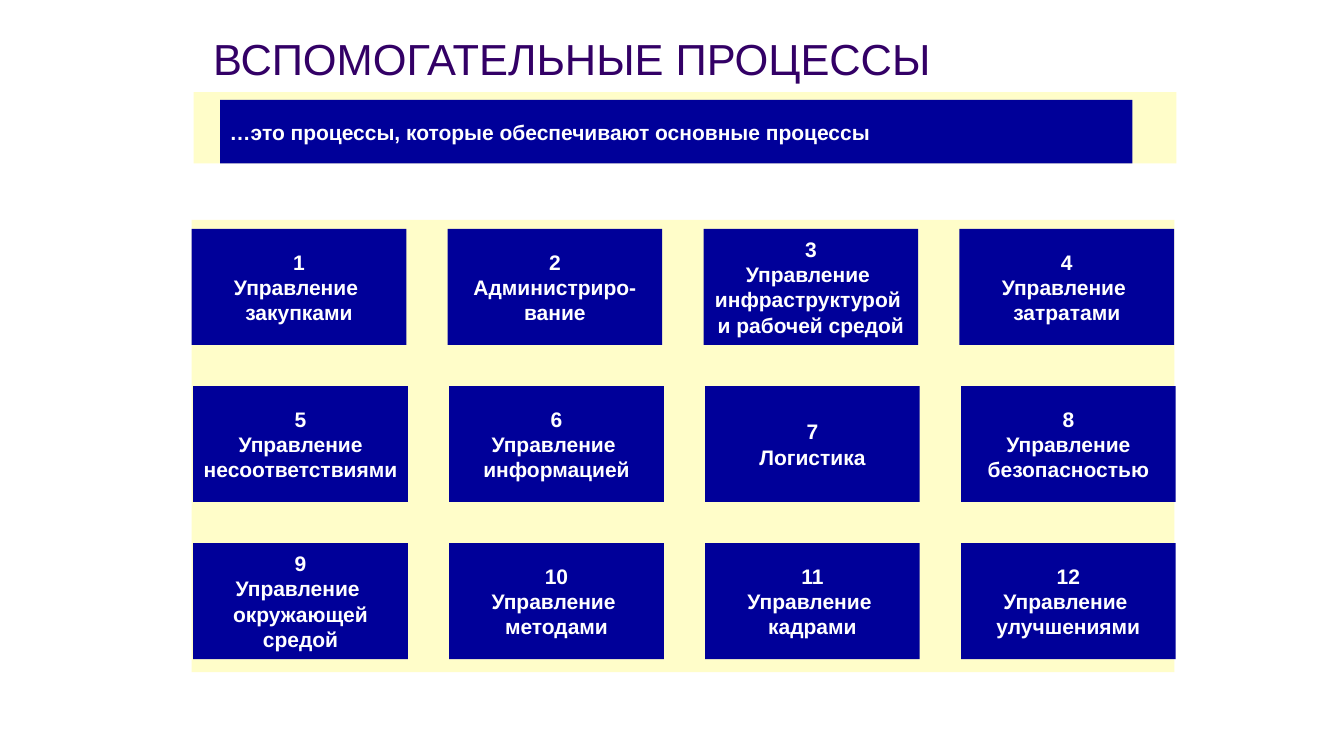
from pptx import Presentation
from pptx.dml.color import RGBColor
from pptx.enum.shapes import MSO_SHAPE as Preset
from pptx.enum.text import MSO_ANCHOR as Anchor, PP_ALIGN as Align
from pptx.util import Cm, Pt

TITLE = "ВСПОМОГАТЕЛЬНЫЕ ПРОЦЕССЫ"
DEFINITION = "…это процессы, которые обеспечивают основные процессы"
PROCESSES = [
    ["Управление ", "закупками"],
    ["Администриро-", "вание"],
    ["Управление ", "инфраструктурой ", "и рабочей средой"],
    ["Управление ", "затратами"],
    ["Управление", "несоответствиями"],
    ["Управление ", "информацией"],
    ["Логистика"],
    ["Управление", "безопасностью"],
    ["Управление ", "окружающей", "средой"],
    ["Управление ", "методами"],
    ["Управление ", "кадрами"],
    ["Управление ", "улучшениями"],
]
NAVY, CREAM, WHITE, PURPLE = "000099", "FFFDC9", "FFFFFF", "330066"
COLUMNS = 4
CARD_WIDTH, CARD_HEIGHT = 5.41, 2.92
GRID_LEFT, GRID_TOP = 4.83, 5.77
STEP_X, STEP_Y = 6.45, 3.96
LOWER_ROW_SHIFT = 0.04


def color(value):
    return RGBColor.from_string(value)


def write(box, lines, size=15, bold=True, fill=WHITE, align=Align.LEFT,
          anchor=Anchor.MIDDLE, wrap=False):
    frame = box.text_frame
    frame.word_wrap = wrap
    frame.vertical_anchor = anchor
    frame.margin_left = frame.margin_right = Cm(0.24)
    frame.margin_top = frame.margin_bottom = Cm(0.12)
    for index, line in enumerate(lines):
        para = frame.paragraphs[0] if index == 0 else frame.add_paragraph()
        para.alignment = align
        span = para.add_run()
        span.text = line
        span.font.name = "Arial"
        span.font.size = Pt(size)
        span.font.bold = bold
        span.font.color.rgb = color(fill)


def rectangle(page, left, top, width, height, fill):
    box = page.shapes.add_shape(
        Preset.RECTANGLE, Cm(left), Cm(top), Cm(width), Cm(height))
    box.shadow.inherit = False
    box.fill.solid()
    box.fill.fore_color.rgb = color(fill)
    box.line.fill.background()
    return box


def main():
    """Build the slide of supporting processes."""
    deck = Presentation()
    deck.slide_width, deck.slide_height = Cm(33.87), Cm(19.05)
    page = deck.slides.add_slide(deck.slide_layouts[6])

    title = page.shapes.add_textbox(Cm(5.13), Cm(0.53), Cm(22.23), Cm(1.7))
    write(title, [TITLE], size=31, bold=False, fill=PURPLE,
          anchor=Anchor.BOTTOM, wrap=True)

    rectangle(page, 4.88, 2.32, 24.77, 1.8, CREAM)
    banner = rectangle(page, 5.55, 2.52, 22.99, 1.6, NAVY)
    write(banner, [DEFINITION])

    rectangle(page, GRID_LEFT, 5.54, 24.77, 11.4, CREAM)
    for index, lines in enumerate(PROCESSES):
        row, column = divmod(index, COLUMNS)
        left = GRID_LEFT + column * STEP_X + (LOWER_ROW_SHIFT if row else 0)
        card = rectangle(page, left, GRID_TOP + row * STEP_Y,
                         CARD_WIDTH, CARD_HEIGHT, NAVY)
        write(card, [str(index + 1), *lines], align=Align.CENTER)

    deck.save("out.pptx")


if __name__ == "__main__":
    main()
